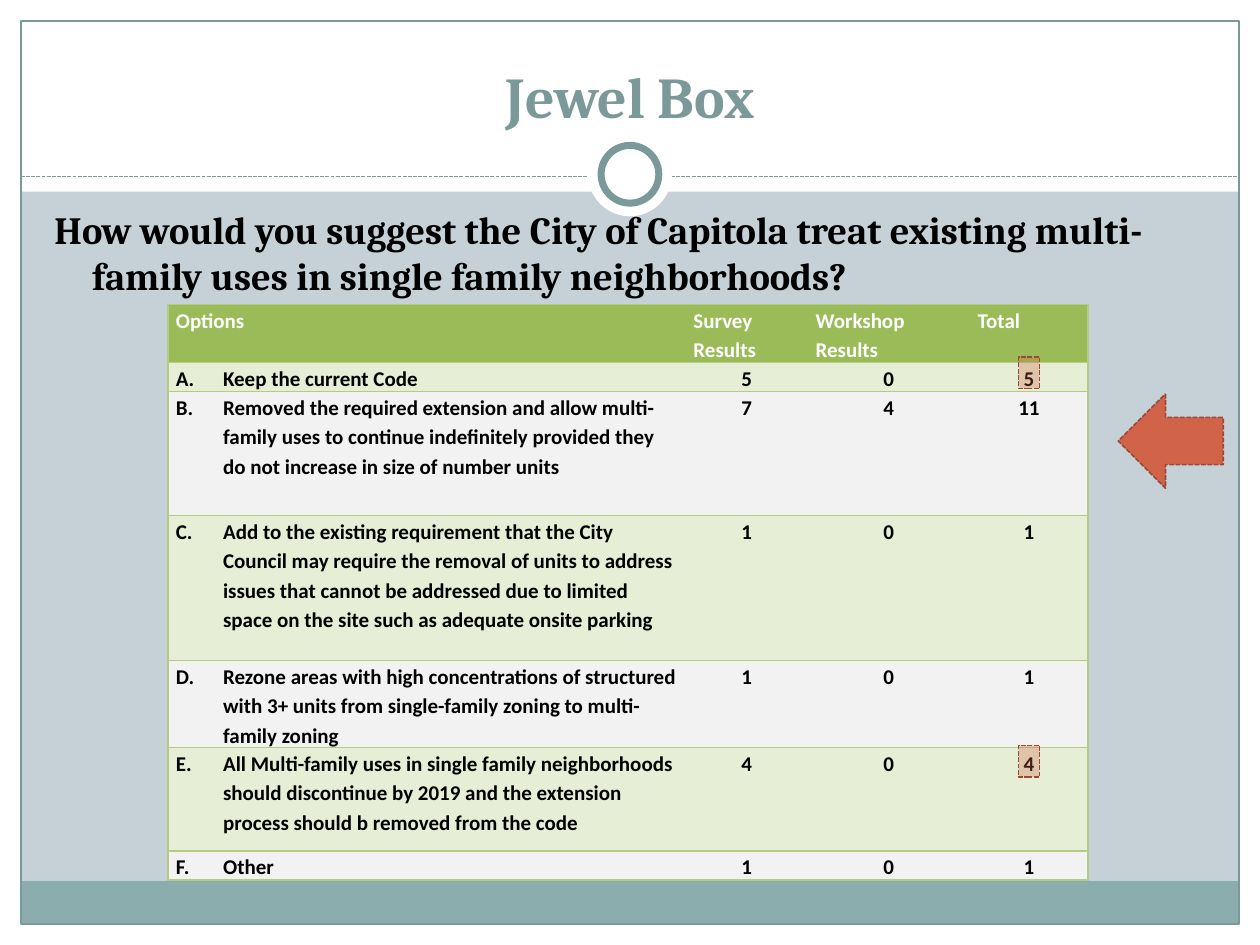
from dataclasses import dataclass
from typing import Optional

from lxml import etree
from pptx import Presentation
from pptx import util as u
from pptx.dml.color import RGBColor
from pptx.enum import dml, shapes, text
from pptx.oxml import ns


@dataclass(frozen=True)
class Theme:
    page: str = "C5D1D7"
    white: str = "FFFFFF"
    black: str = "000000"
    teal: str = "7C999A"
    band: str = "8CADAE"
    header: str = "9BBB59"
    rule: str = "B3CC82"
    odd_row: str = "E6EED5"
    even_row: str = "F2F2F2"
    accent: str = "D16349"
    accent_line: str = "9B4936"
    serif: str = "Cambria"
    sans: str = "Calibri"
    title_size: float = 33
    question_size: float = 22
    table_size: float = 12


@dataclass(frozen=True)
class Block:
    kind: shapes.MSO_SHAPE
    left: float
    top: float
    width: float
    height: float
    fill: Optional[str] = None
    line: Optional[str] = None
    weight: float = 0.75
    dashed: bool = False
    opacity: int = 100
    rotation: float = 0


@dataclass(frozen=True)
class Option:
    label: str
    survey: int
    workshop: int
    total: int
    height: float


THEME = Theme()
RECT, OVAL = shapes.MSO_SHAPE.RECTANGLE, shapes.MSO_SHAPE.OVAL
ALIGN = text.PP_ALIGN
WIDTH, HEIGHT, MARGIN = 720, 540, 12
ROW_INDENT = 27

FRAME = [
    Block(RECT, 0, HEIGHT - MARGIN, WIDTH, MARGIN, THEME.white),
    Block(RECT, 0, 0, WIDTH, 109.5, THEME.white),
    Block(RECT, 0, 0, MARGIN, HEIGHT, THEME.white),
    Block(RECT, WIDTH - MARGIN, 0, MARGIN, HEIGHT, THEME.white),
    Block(RECT, MARGIN, 503.5, WIDTH - 2 * MARGIN, 24.5, THEME.band),
    Block(RECT, MARGIN, MARGIN, WIDTH - 2 * MARGIN, HEIGHT - 2 * MARGIN, line=THEME.teal),
]
RING = [
    Block(OVAL, 336, 75.6, 48, 48, THEME.white),
    Block(OVAL, 343.5, 83.1, 33, 33, THEME.white, THEME.teal, 4),
]
MARKS = [
    Block(shapes.MSO_SHAPE.DOWN_ARROW, 642, 222, 54, 60, THEME.accent,
          THEME.accent_line, 0.9, True, rotation=90),
    *(Block(RECT, 582, top, 12, 18, THEME.accent, THEME.accent_line, 0.9, True, 30)
      for top in (426, 204)),
]

HEADINGS = ["Options", "Survey\nResults", "Workshop\nResults", "Total"]
COLUMNS = [295.8, 69.8, 92.6, 67.6]
OPTIONS = [
    Option("Keep the current Code", 5, 0, 5, 12.2),
    Option("Removed the required extension and allow multi-family uses to continue "
           "indefinitely provided they do not increase in size of number units", 7, 4, 11, 71),
    Option("Add to the existing requirement that the City Council may require the removal "
           "of units to address issues that cannot be addressed due to limited space on the "
           "site such as adequate onsite parking", 1, 0, 1, 82.8),
    Option("Rezone areas with high concentrations of structured with 3+ units from "
           "single-family zoning to multi-family zoning", 1, 0, 1, 47.5),
    Option("All Multi-family uses in single family neighborhoods should discontinue by 2019 "
           "and the extension process should b removed from the code", 4, 0, 4, 59),
    Option("Other", 1, 0, 1, 12.2),
]


def rgb(value: str) -> RGBColor:
    return RGBColor.from_string(value)


def write(frame, content: str, *, size: float, font: str, color: str, align=ALIGN.LEFT,
          indent: float = 0, spacing: Optional[float] = None, letter: int = 0) -> None:
    """Fill a text frame in bold; letter is the position in an A., B., C. list."""
    frame.word_wrap = True
    for index, line in enumerate(content.split("\n")):
        para = frame.paragraphs[0] if index == 0 else frame.add_paragraph()
        para.alignment = align
        if spacing:
            para.line_spacing = spacing
        props = para._p.get_or_add_pPr()
        if indent:
            props.set("marL", str(u.Pt(indent)))
            props.set("indent", str(-u.Pt(indent)))
        if letter:
            etree.SubElement(props, ns.qn("a:buAutoNum"), type="alphaUcPeriod",
                             startAt=str(letter))
        span = para.add_run()
        span.text = line
        span.font.size, span.font.name, span.font.bold = u.Pt(size), font, True
        span.font.color.rgb = rgb(color)


def draw_block(page, block: Block) -> None:
    shape = page.shapes.add_shape(block.kind, *map(
        u.Pt, (block.left, block.top, block.width, block.height)))
    shape.shadow.inherit = False
    shape.rotation = block.rotation
    if block.fill:
        shape.fill.solid()
        shape.fill.fore_color.rgb = rgb(block.fill)
        if block.opacity < 100:
            color = shape._element.spPr.find(".//" + ns.qn("a:srgbClr"))
            etree.SubElement(color, ns.qn("a:alpha"), val=str(block.opacity * 1000))
    else:
        shape.fill.background()
    if block.line:
        shape.line.color.rgb = rgb(block.line)
        shape.line.width = u.Pt(block.weight)
        if block.dashed:
            shape.line.dash_style = dml.MSO_LINE.SQUARE_DOT
    else:
        shape.line.fill.background()


def draw_divider(page, top: float) -> None:
    line = page.shapes.add_connector(shapes.MSO_CONNECTOR.STRAIGHT, *map(
        u.Pt, (MARGIN, top, WIDTH - MARGIN, top)))
    line.line.color.rgb = rgb(THEME.teal)
    line.line.width = u.Pt(0.75)
    line.line.dash_style = dml.MSO_LINE.SQUARE_DOT
    etree.SubElement(line._element.spPr, ns.qn("a:effectLst"))


def style_cell(cell, fill: str, sides: str) -> None:
    cell.margin_left = cell.margin_right = u.Pt(4.5)
    cell.margin_top = cell.margin_bottom = 0
    props = cell._tc.get_or_add_tcPr()
    for side in sides:
        border = etree.SubElement(props, ns.qn(f"a:ln{side}"), w=str(u.Pt(1)))
        paint = etree.SubElement(border, ns.qn("a:solidFill"))
        etree.SubElement(paint, ns.qn("a:srgbClr"), val=THEME.rule)
    cell.fill.solid()
    cell.fill.fore_color.rgb = rgb(fill)


def draw_table(page) -> None:
    heights = [24.5] + [option.height for option in OPTIONS]
    table = page.shapes.add_table(len(heights), len(COLUMNS), *map(
        u.Pt, (96, 174, sum(COLUMNS), sum(heights)))).table
    # Plain table style, so only the cell borders below show
    style = table._tbl.tblPr.find(ns.qn("a:tableStyleId"))
    style.text = "{2D5ABB26-0587-4C30-8999-92F81FD0307C}"
    for column, width in zip(table.columns, COLUMNS):
        column.width = u.Pt(width)
    rows = [HEADINGS] + [[o.label, o.survey, o.workshop, o.total] for o in OPTIONS]
    for r, values in enumerate(rows):
        table.rows[r].height = u.Pt(heights[r])
        fill = THEME.header if r == 0 else (THEME.odd_row if r % 2 else THEME.even_row)
        for c, value in enumerate(values):
            cell = table.cell(r, c)
            style_cell(cell, fill, {0: "LTB", len(COLUMNS) - 1: "RTB"}.get(c, "TB"))
            is_option = r > 0 and c == 0
            number_align = ALIGN.JUSTIFY if r == 0 else ALIGN.CENTER
            write(cell.text_frame, str(value), size=THEME.table_size, font=THEME.sans,
                  color=THEME.black if r else THEME.white, spacing=1.15,
                  align=number_align if c else ALIGN.LEFT,
                  indent=ROW_INDENT if is_option else 0, letter=r if is_option else 0)


def main() -> None:
    deck = Presentation()
    deck.slide_width, deck.slide_height = u.Pt(WIDTH), u.Pt(HEIGHT)
    page = deck.slides.add_slide(deck.slide_layouts[5])
    page.background.fill.solid()
    page.background.fill.fore_color.rgb = rgb(THEME.page)

    # Frame, divider and ring
    for block in FRAME:
        draw_block(page, block)
    draw_divider(page, 100.8)
    for block in RING:
        draw_block(page, block)

    # Title, brought in front of the frame
    title = page.shapes.title
    title._element.getparent().append(title._element)
    title.left, title.top, title.width, title.height = map(u.Pt, (24, 18, 672, 60))
    title.text_frame.vertical_anchor = text.MSO_ANCHOR.BOTTOM
    write(title.text_frame, "Jewel Box", size=THEME.title_size, font=THEME.serif,
          color=THEME.teal, align=ALIGN.CENTER)

    # Question
    box = page.shapes.add_textbox(*map(u.Pt, (24, 114, 696, 60)))
    write(box.text_frame, "How would you suggest the City of Capitola treat existing multi- "
          "family uses in single family neighborhoods?", size=THEME.question_size,
          font=THEME.serif, color=THEME.black, indent=21.6)

    # Results and marks
    draw_table(page)
    for block in MARKS:
        draw_block(page, block)
    deck.save("out.pptx")


if __name__ == "__main__":
    main()
